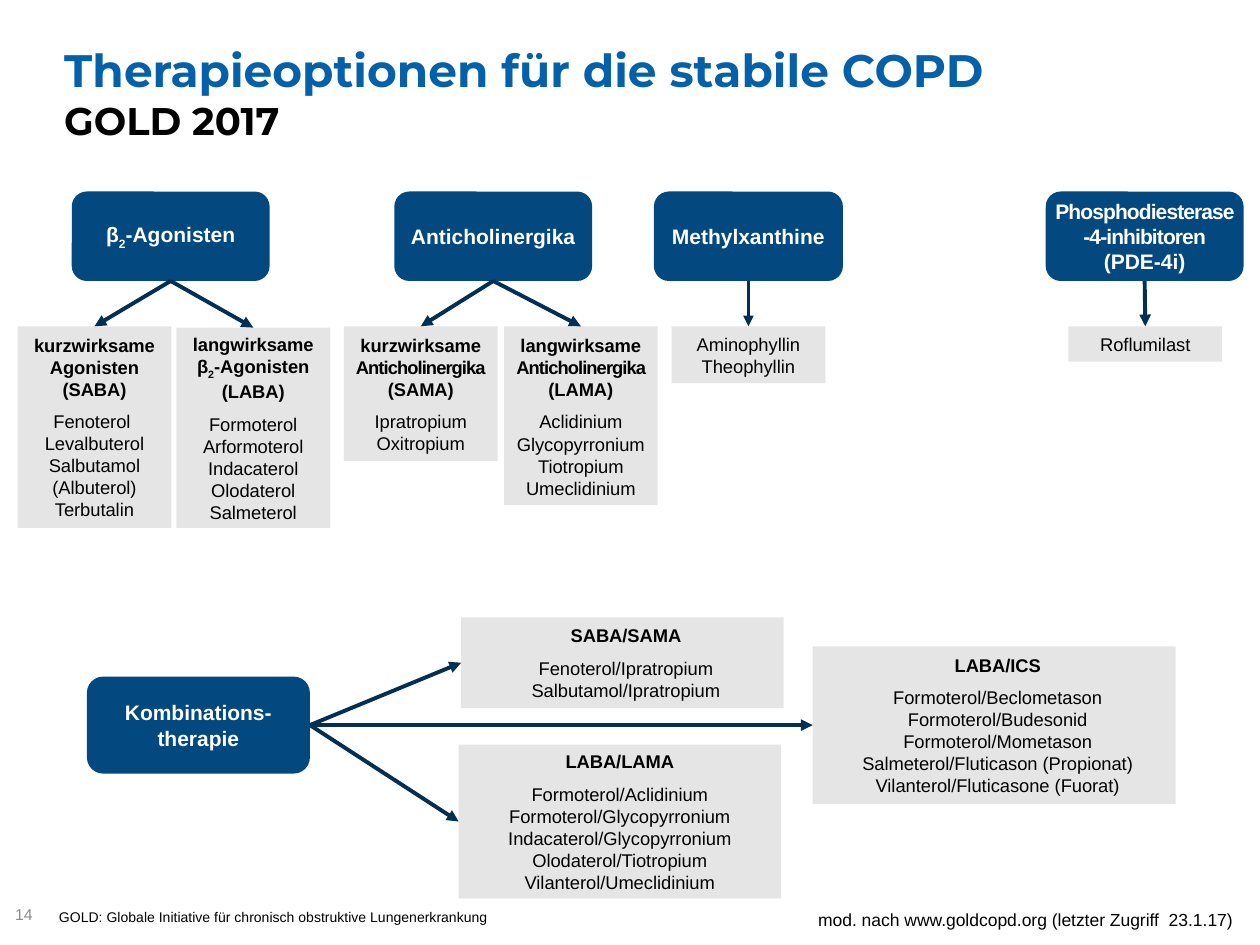
from lxml.etree import SubElement
from pptx import Presentation
from pptx.dml.color import RGBColor
from pptx.enum.shapes import MSO_CONNECTOR as Line, MSO_SHAPE as Shape
from pptx.enum.text import MSO_ANCHOR as Anchor, MSO_AUTO_SIZE as Fit, PP_ALIGN as Align
from pptx.oxml.ns import qn
from pptx.util import Emu, Pt

PX = 9144  # 100 px to the inch
NAVY = RGBColor(0x03, 0x48, 0x7F)
ARROW = RGBColor(0x02, 0x30, 0x54)
BLUE = RGBColor(0x04, 0x60, 0xA9)
PALE = RGBColor(0xE5, 0xE5, 0xE5)
GREY = RGBColor(0x8C, 0x8C, 0x8C)
BLACK = RGBColor(0, 0, 0)
WHITE = RGBColor(0xFF, 0xFF, 0xFF)

BOTTOM_TO_TOP = (2, 0)
RIGHT_TO_LEFT = (3, 1)
SUB = {"baseline": "-25000"}
TIGHT = {"spc": "-50"}
BETA2 = [("β", {}), ("2", SUB)]


def px(*values):
    return [Emu(v * PX) for v in values]


class Deck:
    def __init__(self, width, height):
        self.prs = Presentation()
        self.prs.slide_width, self.prs.slide_height = px(width, height)
        self.slide = self.prs.slides.add_slide(self.prs.slide_layouts[6])
        self.shapes = self.slide.shapes

    def frame(self, s, insets, anchor=Anchor.MIDDLE, grow=False):
        tf = s.text_frame
        left, top, right, bottom = px(*insets)
        values = {"word_wrap": True, "vertical_anchor": anchor,
                  "auto_size": Fit.SHAPE_TO_FIT_TEXT if grow else Fit.NONE,
                  "margin_left": left, "margin_top": top,
                  "margin_right": right, "margin_bottom": bottom}
        for name, value in values.items():
            setattr(tf, name, value)
        return tf

    def add_runs(self, p, runs, size, color, bold=False, font="Arial"):
        """Fill a paragraph from a string or from (text, run attributes) pairs."""
        for text, extra in [(runs, {})] if isinstance(runs, str) else runs:
            for i, line in enumerate(text.split("\n")):
                if i:
                    p.add_line_break()
                if not line:
                    continue
                r = p.add_run()
                r.text = line
                for name, value in {"name": font, "size": Pt(size), "bold": bold}.items():
                    setattr(r.font, name, value)
                r.font.color.rgb = color
                for name, value in extra.items():
                    r.font._element.set(name, value)

    def text(self, box, runs, size, color=BLACK, insets=(10, 5, 10, 5),
             anchor=Anchor.TOP, align=Align.LEFT, grow=True, spacing=1.0):
        s = self.shapes.add_textbox(*px(*box))
        p = self.frame(s, insets, anchor, grow).paragraphs[0]
        p.alignment, p.line_spacing = align, spacing
        self.add_runs(p, runs, size, color)

    def title(self, box, main, sub):
        s = self.shapes.add_textbox(*px(*box))
        p = self.frame(s, (0, 0, 0, 0)).paragraphs[0]
        self.add_runs(p, main + "\n", 26, BLUE, True, "Montserrat")
        self.add_runs(p, sub, 22, BLACK, True, "Montserrat")

    def block(self, kind, box, fill):
        s = self.shapes.add_shape(kind, *px(*box))
        s.shadow.inherit = False
        s.fill.solid()
        s.fill.fore_color.rgb = fill
        s.line.fill.background()
        return s

    def group(self, box, runs, side=4):
        """Rounded box naming a class of drugs."""
        s = self.block(Shape.ROUNDED_RECTANGLE, box, NAVY)
        p = self.frame(s, (side, 5, side, 5)).paragraphs[0]
        p.alignment = Align.CENTER
        self.add_runs(p, runs, 12, WHITE, True)
        return s

    def drugs(self, box, heading, *body, insets=(4, 5, 4, 4)):
        """Pale box with an optional bold heading above its drugs."""
        s = self.block(Shape.RECTANGLE, box, PALE)
        tf = self.frame(s, insets, grow=True)
        parts = [(heading, True)] if heading else []
        parts += [(part, False) for part in body]
        for i, (runs, bold) in enumerate(parts):
            p = tf.add_paragraph() if i else tf.paragraphs[0]
            p.alignment = Align.CENTER
            p.space_after = Pt(6 if bold or len(body) == 1 else 0)
            self.add_runs(p, runs, 10.5, BLACK, bold)
        return s

    def arrow(self, start, end, sides, width=2.25):
        c = self.shapes.add_connector(Line.STRAIGHT, 0, 0, 0, 0)
        c.begin_connect(start, sides[0])
        c.end_connect(end, sides[1])
        c.line.color.rgb = ARROW
        c.line.width = Pt(width)
        SubElement(c.line._get_or_add_ln(), qn("a:tailEnd"), type="triangle")
        SubElement(c._element.spPr, qn("a:effectLst"))


def main():
    d = Deck(1000, 750)
    d.title((51, 21, 898, 105), "Therapieoptionen für die stabile COPD ", "GOLD 2017")
    d.text((0, 706, 31, 40), "14", 9, GREY, (12, 5, 5, 5), Anchor.MIDDLE, grow=False)

    beta = d.group((57, 152, 157, 71), BETA2 + [("-Agonisten", {})], 10)
    anti = d.group((313, 152, 157, 71), "Anticholinergika", 8)
    methyl = d.group((519, 152, 150, 71), "Methylxanthine", 10)
    pde = d.group((830, 152, 157, 71),
                  [("Phosphodiesterase-4-inhibitoren", TIGHT), (" (PDE-4i)", {})])
    combi = d.group((69, 537, 177, 77), "Kombinations-therapie")

    saba = d.drugs((14, 259, 122, 160), "kurzwirksame Agonisten\n(SABA)",
                   "Fenoterol \nLevalbuterol Salbutamol (Albuterol) Terbutalin",
                   insets=(4, 4, 4, 4))
    laba = d.drugs((140, 260, 122, 159),
                   [("langwirksame\n", {})] + BETA2 + [("-Agonisten (LABA)", {})],
                   "Formoterol\nArformoterol\nIndacaterol\nOlodaterol\nSalmeterol")
    sama = d.drugs((273, 259, 122, 107),
                   [("kurzwirksame ", {}), ("Anticholinergika", TIGHT), (" (SAMA)", {})],
                   "Ipratropium\nOxitropium")
    lama = d.drugs((400, 259, 122, 142),
                   [("langwirksame ", {}), ("Anticholinergika ", TIGHT), ("(LAMA)", {})],
                   "Aclidinium\nGlycopyrronium\nTiotropium\nUmeclidinium")
    xanthines = d.drugs((533, 259, 122, 45), None, "Aminophyllin\nTheophyllin")
    roflumilast = d.drugs((848, 259, 122, 28), None, "Roflumilast", insets=(4, 5, 4, 5))

    saba_sama = d.drugs((366, 490, 256, 72), "SABA/SAMA",
                        "Fenoterol/Ipratropium", "Salbutamol/Ipratropium",
                        insets=(10, 5, 4, 5))
    laba_ics = d.drugs((645, 513, 288, 125), "LABA/ICS",
                       "Formoterol/Beclometason\nFormoterol/Budesonid\n"
                       "Formoterol/Mometason\nSalmeterol/Fluticason (Propionat)\n"
                       "Vilanterol/Fluticasone (Fuorat)", insets=(10, 5, 4, 5))
    laba_lama = d.drugs((364, 591, 256, 122), "LABA/LAMA", "Formoterol/Aclidinium",
                        "Formoterol/Glycopyrronium\nIndacaterol/Glycopyrronium",
                        "Olodaterol/Tiotropium", "Vilanterol/Umeclidinium",
                        insets=(4, 4, 4, 4))

    d.arrow(methyl, xanthines, BOTTOM_TO_TOP, 2)
    for start, end in ((pde, roflumilast), (beta, saba), (beta, laba),
                       (anti, sama), (anti, lama)):
        d.arrow(start, end, BOTTOM_TO_TOP)
    for end in (saba_sama, laba_lama, laba_ics):
        d.arrow(combi, end, RIGHT_TO_LEFT)

    d.text((623, 715, 365, 29), "mod. nach www.goldcopd.org (letzter Zugriff  23.1.17)",
           10, align=Align.RIGHT, spacing=1.1)
    d.text((37, 716, 500, 24),
           "GOLD: Globale Initiative für chronisch obstruktive Lungenerkrankung", 8)
    d.prs.save("out.pptx")


if __name__ == "__main__":
    main()
